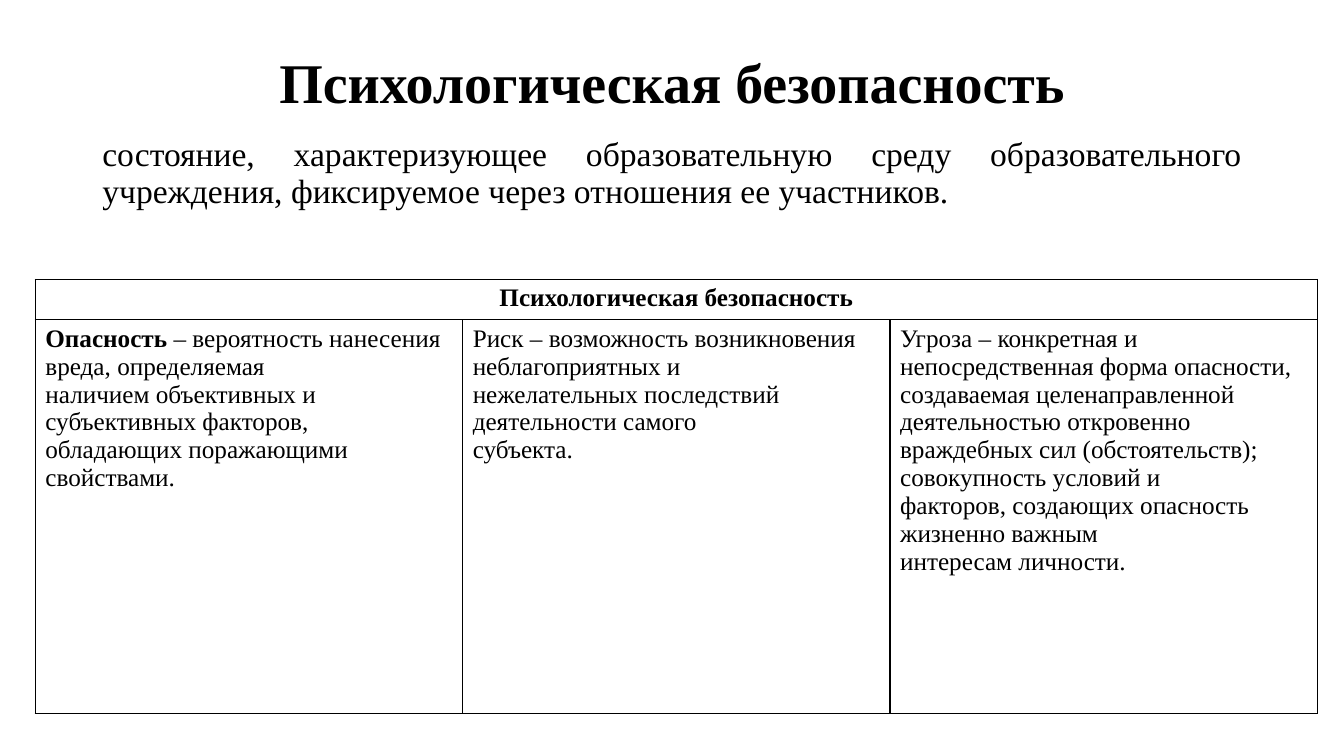
from lxml import etree
from pptx import Presentation
from pptx.dml.color import RGBColor
from pptx.enum import text
from pptx.oxml import ns
from pptx.util import Cm, Pt

BLACK = RGBColor(0, 0, 0)
FONT = "Times New Roman"
HEAD = "Психологическая безопасность"
BODY = ("состояние, характеризующее образовательную среду "
        "образовательного учреждения, фиксируемое через отношения ее участников.")
TERMS = [
    ("Опасность", True, [
        " – вероятность нанесения вреда, определяемая",
        "наличием объективных и субъективных факторов,",
        "обладающих поражающими свойствами."]),
    ("Риск", False, [
        " – возможность возникновения неблагоприятных и",
        "нежелательных последствий деятельности самого",
        "субъекта."]),
    ("Угроза", False, [
        " – конкретная и непосредственная форма опасности,",
        "создаваемая целенаправленной деятельностью откровенно",
        "враждебных сил (обстоятельств); совокупность условий и",
        "факторов, создающих опасность жизненно важным",
        "интересам личности."]),
]
LEFT, WIDTH = Cm(2.33), Cm(29.21)
COL, ROWS = Cm(10.77), (Cm(0.96), Cm(9.93))


def style(par, size, align, bold=False):
    par.alignment = align
    font = par.font
    font.name, font.size, font.bold = FONT, Pt(size), bold
    font.color.rgb = BLACK


def frame(cell):
    cell.fill.background()
    props = cell._tc.get_or_add_tcPr()
    for i, side in enumerate(("lnL", "lnR", "lnT", "lnB")):
        line = etree.Element(ns.qn("a:" + side), w=str(Pt(1)))
        fill = etree.SubElement(line, ns.qn("a:solidFill"))
        etree.SubElement(fill, ns.qn("a:srgbClr"), val=str(BLACK))
        props.insert(i, line)


def main():
    prs = Presentation()
    prs.slide_width, prs.slide_height = Cm(33.87), Cm(19.05)
    slide = prs.slides.add_slide(prs.slide_layouts[5])

    title = slide.shapes.title
    title.left, title.top, title.width, title.height = LEFT, Cm(1.02), WIDTH, Cm(3.68)
    box = title.text_frame
    box.text = HEAD
    box.vertical_anchor = text.MSO_ANCHOR.TOP
    box.margin_top = Cm(0.38)
    style(box.paragraphs[0], 40, text.PP_ALIGN.CENTER, True)
    box.paragraphs[0].line_spacing = 0.9

    box = slide.shapes.add_textbox(LEFT, Cm(3.35), WIDTH, Cm(2.4)).text_frame
    box.word_wrap = True
    box.text = BODY
    style(box.paragraphs[0], 24, text.PP_ALIGN.JUSTIFY)
    box.paragraphs[0].line_spacing = 0.9

    table = slide.shapes.add_table(
        2, len(TERMS), Cm(0.89), Cm(7.04), COL * len(TERMS), sum(ROWS)).table
    table.first_row = table.horz_banding = False
    for row, high in zip(table.rows, ROWS):
        row.height = high
    for cell in table.iter_cells():
        frame(cell)

    top = table.cell(0, 0)
    top.merge(table.cell(0, len(TERMS) - 1))
    top.text = HEAD
    style(top.text_frame.paragraphs[0], 18, text.PP_ALIGN.CENTER, True)

    for i, (term, bold, lines) in enumerate(TERMS):
        table.columns[i].width = COL
        par = table.cell(1, i).text_frame.paragraphs[0]
        style(par, 18, text.PP_ALIGN.LEFT)
        run = par.add_run()
        run.text, run.font.bold = term, bold
        for j, line in enumerate(lines):
            if j:
                par.add_line_break()
            par.add_run().text = line

    prs.save("out.pptx")


if __name__ == "__main__":
    main()
